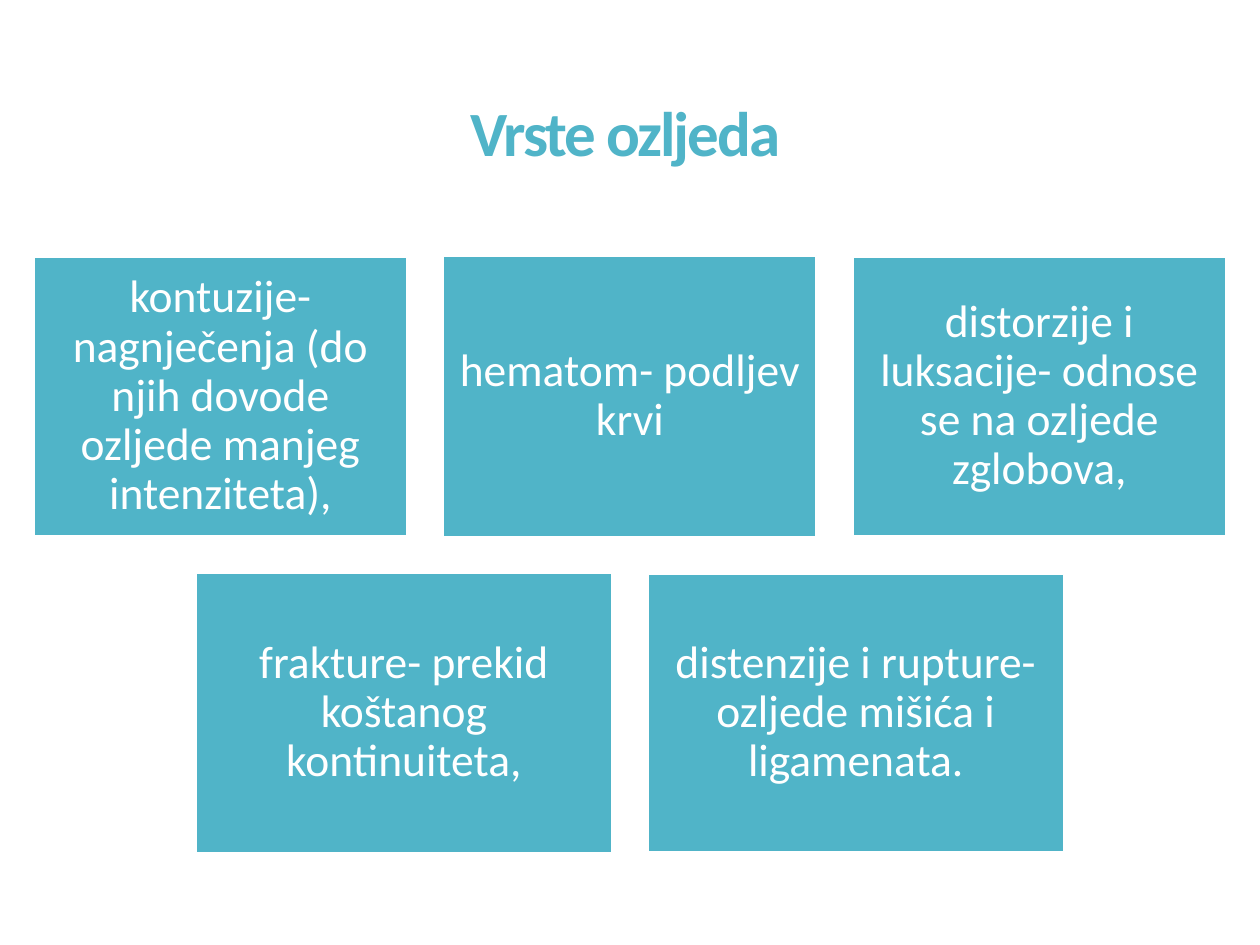
from pptx import Presentation
from pptx.dml.color import RGBColor
from pptx.enum.shapes import MSO_SHAPE
from pptx.enum.text import MSO_ANCHOR, PP_ALIGN
from pptx.util import Pt

RECTANGLE = MSO_SHAPE.RECTANGLE
MIDDLE = MSO_ANCHOR.MIDDLE
CENTER = PP_ALIGN.CENTER

COLORS = {"teal": "50B4C8", "white": "FFFFFF"}
FONT = "Calibri"
SLIDE_WIDTH, SLIDE_HEIGHT = 720, 540
GAP = 21

TITLE = "Vrste ozljeda"
INJURY_ROWS = [
    {
        "middle": 226.5,
        "width": 213,
        "cards": [
            ("kontuzije- nagnječenja (do njih dovode ozljede manjeg intenziteta),", 159),
            ("hematom- podljev krvi", 160.5),
            ("distorzije i luksacije- odnose se na ozljede zglobova,", 159),
        ],
    },
    {
        "middle": 407.5,
        "width": 237.25,
        "cards": [
            ("frakture- prekid koštanog kontinuiteta,", 160),
            ("distenzije i rupture- ozljede mišića i ligamenata.", 158.5),
        ],
    },
]


def color(name):
    return RGBColor.from_string(COLORS[name])


def write_text(shape, text, size, color_name, inset, bold=False):
    frame = shape.text_frame
    frame.text = text
    frame.word_wrap = True
    frame.vertical_anchor = MIDDLE
    frame.margin_left = frame.margin_right = Pt(inset)
    frame.margin_top = frame.margin_bottom = Pt(inset)
    paragraph = frame.paragraphs[0]
    paragraph.alignment = CENTER
    paragraph.line_spacing = 0.9
    run = paragraph.runs[0]
    run.font.name = FONT
    run.font.size = Pt(size)
    run.font.bold = bold
    run.font.color.rgb = color(color_name)
    return run


def add_title(slide):
    box = slide.shapes.add_textbox(Pt(39), Pt(39.5), Pt(636.5), Pt(76.5))
    run = write_text(box, TITLE, 36, "teal", 4, bold=True)
    run.font._element.set("spc", "-120")


def add_card(slide, text, left, middle, width, height):
    card = slide.shapes.add_shape(
        RECTANGLE, Pt(left), Pt(middle - height / 2), Pt(width), Pt(height)
    )
    card.shadow.inherit = False
    card.fill.solid()
    card.fill.fore_color.rgb = color("teal")
    card.line.color.rgb = color("white")
    card.line.width = Pt(1)
    write_text(card, text, 26, "white", 7.8)


def add_row(slide, row):
    cards, width = row["cards"], row["width"]
    step = width + GAP
    start = (SLIDE_WIDTH - len(cards) * step + GAP) / 2
    for index, (text, height) in enumerate(cards):
        add_card(slide, text, start + index * step, row["middle"], width, height)


def main():
    presentation = Presentation()
    presentation.slide_width = Pt(SLIDE_WIDTH)
    presentation.slide_height = Pt(SLIDE_HEIGHT)
    slide = presentation.slides.add_slide(presentation.slide_layouts[6])
    add_title(slide)
    for row in INJURY_ROWS:
        add_row(slide, row)
    presentation.save("out.pptx")


if __name__ == "__main__":
    main()
